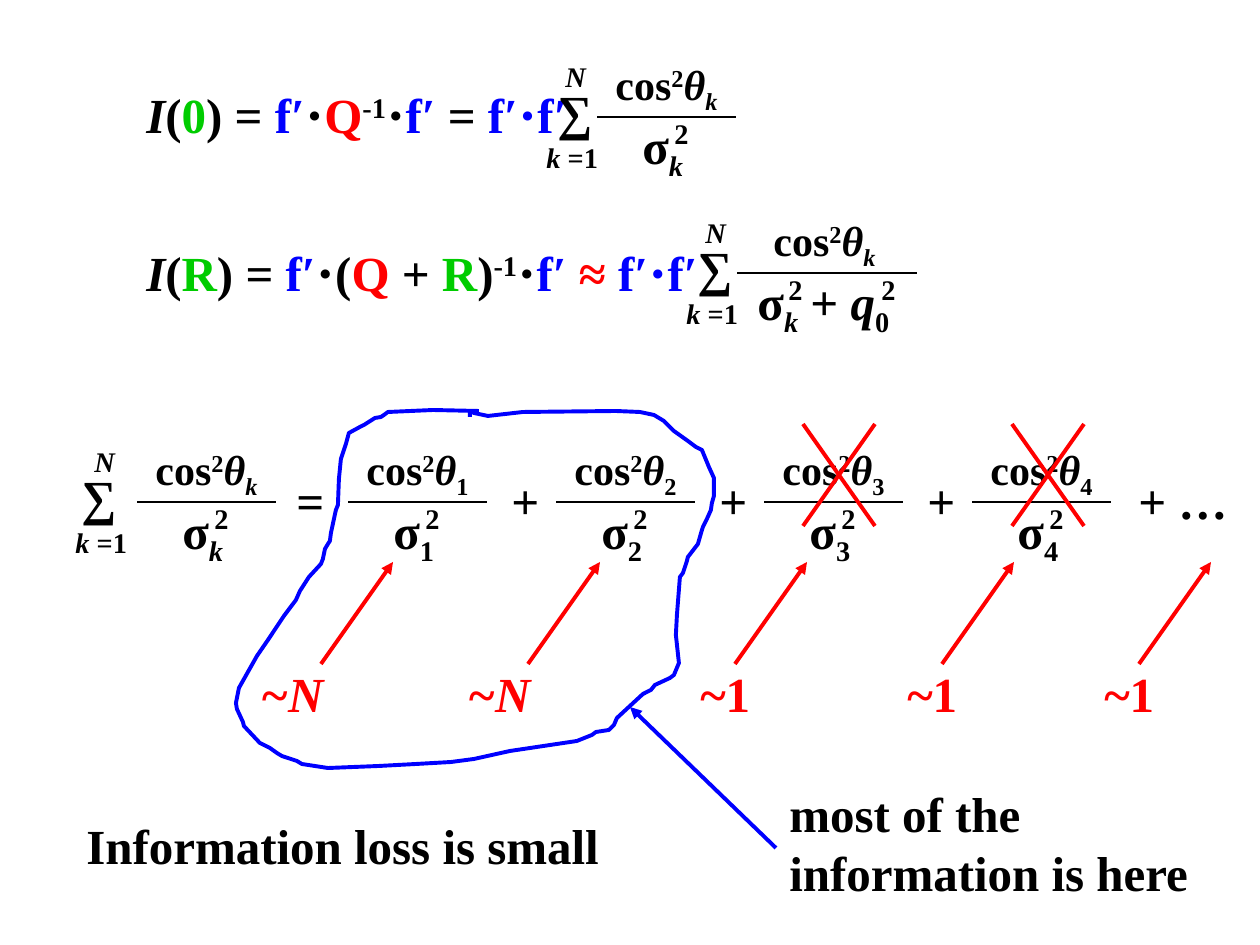
from lxml import etree
from pptx import Presentation
from pptx import util as u
from pptx.dml.color import RGBColor
from pptx.enum import shapes, text
from pptx.oxml.ns import qn

EMU_PER_PX = 914400 / 126
FONT = "Times New Roman"
BLACK = RGBColor(0, 0, 0)
RED = RGBColor(255, 0, 0)
GREEN = RGBColor(0, 204, 0)
BLUE = RGBColor(0, 0, 255)
SUP, SUB = 30000, -25000
LINE_HEIGHT = 72

LASSO = [
    (479, 411), (433, 410), (388, 412), (384, 415), (381, 417), (375, 418),
    (364, 425), (360, 427), (349, 433), (346, 444), (341, 459), (339, 479),
    (338, 505), (336, 510), (331, 533), (330, 541), (328, 544), (325, 549),
    (323, 559), (321, 564), (309, 577), (300, 591), (296, 600), (284, 616),
    (268, 640), (257, 656), (239, 688), (236, 703), (237, 709), (243, 722),
    (244, 726), (260, 743), (270, 748), (277, 753), (282, 756), (297, 761),
    (302, 764), (328, 768), (379, 766), (416, 764), (451, 762), (474, 759),
    (510, 751), (537, 747), (577, 741), (592, 735), (596, 732), (609, 730),
    (614, 725), (617, 718), (643, 694), (651, 690), (655, 685), (670, 678),
    (674, 675), (679, 663), (676, 635), (677, 615), (680, 577), (683, 573),
    (687, 561), (688, 557), (698, 544), (702, 530), (703, 527), (707, 519),
    (711, 510), (712, 503), (714, 496), (714, 478), (709, 467), (702, 450),
    (696, 447), (688, 441), (674, 431), (664, 421), (654, 415), (640, 412),
    (616, 411), (523, 412), (488, 416), (474, 413), (470, 411), (470, 417),
]


def px(length):
    return u.Emu(round(length * EMU_PER_PX))


def run(content, color=BLACK, italic=False, base=0):
    return content, color, italic, base


def write(slide, left, top, width, *paragraphs, size=28, height=LINE_HEIGHT, wrap=False):
    """Place a bold text box; each paragraph is a list of runs."""
    box = slide.shapes.add_textbox(px(left), px(top), px(width), px(height))
    frame = box.text_frame
    frame.word_wrap = wrap
    frame.auto_size = text.MSO_AUTO_SIZE.SHAPE_TO_FIT_TEXT
    for number, runs in enumerate(paragraphs):
        paragraph = frame.add_paragraph() if number else frame.paragraphs[0]
        for content, color, italic, base in runs:
            part = paragraph.add_run()
            part.text = content
            font = part.font
            font.name, font.size, font.bold, font.italic = FONT, u.Pt(size), True, italic
            font.color.rgb = color
            if base:
                part._r.get_or_add_rPr().set("baseline", str(base))


def draw_line(slide, start, end, color=RED, weight=2.25, arrow=False):
    line = slide.shapes.add_connector(
        shapes.MSO_CONNECTOR.STRAIGHT, *map(px, (*start, *end)))
    line.line.color.rgb = color
    line.line.width = u.Pt(weight)
    if arrow:
        etree.SubElement(line.line._get_or_add_ln(), qn("a:tailEnd"), type="triangle")
    etree.SubElement(line._element.spPr, qn("a:effectLst"))


def summation(slide, left, bar, sigma_dx=11):
    """Sum over k from 1 to N, centred on the height of a fraction bar."""
    write(slide, left + sigma_dx, bar - 42, 60, [run("∑")])
    write(slide, left, bar - 16, 86,
          [run("k ", italic=True, base=SUB), run("=1", base=SUB)])
    write(slide, left + 19, bar - 97, 49, [run("N", italic=True, base=SUB)])


def fraction(slide, left, bar, index, width=139, cos_dx=6, sigma_dx=33,
             square_dxs=(65,), addend=()):
    """cos²θ over σ², with an optional addend below the bar."""
    theta_index = run(index, italic=index == "k", base=SUB)
    write(slide, left + cos_dx, bar - 65, 133,
          [run("cos"), run("2", base=SUP), run("θ", italic=True), theta_index],
          size=24, height=63)
    draw_line(slide, (left + width, bar), (left, bar), BLACK, 1.5)
    for square_dx in square_dxs:
        write(slide, left + square_dx, bar - 13, 42, [run("2", base=SUP)])
    write(slide, left + sigma_dx, bar - 8, 168 if addend else 73,
          [run("σ"), theta_index, *addend])


def information_formulas(slide, left):
    prime = run("f′", BLUE)
    dot = run("⋅")
    product = run("f′⋅f′", BLUE)
    inverse = run("-1", base=SUP)
    write(slide, left, 78, 857,
          [run("I", italic=True), run("("), run("0", GREEN), run(") = "), prime, dot,
           run("Q", RED), inverse, dot, prime, run(" = "), product], wrap=True)
    summation(slide, left + 400, 117)
    fraction(slide, left + 463, 117, "k")

    write(slide, left, 236, 857,
          [run("I", italic=True), run("("), run("R", GREEN), run(") = "), prime, run("⋅("),
           run("Q ", RED), run("+ "), run("R", GREEN), run(")"), inverse, dot,
           run("f′ ", BLUE), run("≈ ", RED), product], wrap=True)
    summation(slide, left + 540, 273)
    fraction(slide, left + 603, 273, "k", width=180, cos_dx=24, sigma_dx=8,
             square_dxs=(39, 132),
             addend=(run(" + "), run("q", italic=True), run("0", base=SUB)))


def expansion(slide, left, bar):
    """The sum written out term by term."""
    operator_top = bar - 38
    summation(slide, left, bar, sigma_dx=6)
    fraction(slide, left + 74, bar, "k")
    write(slide, left + 221, operator_top, 54, [run("=")])
    for term in range(4):
        term_left = left + 285 + 208 * term
        fraction(slide, term_left, bar, str(term + 1))
        if term < 3:
            write(slide, term_left + 151, operator_top, 54, [run("+")])
    write(slide, left + 1063, operator_top, 116, [run("+ …")])


def term_sizes(slide, top):
    """Order of magnitude of each denominator, with an arrow to it."""
    for left, size in zip((321, 528, 735, 942, 1139), "NN111"):
        draw_line(slide, (left, top + 102), (left + 72, top), arrow=True)
        is_n = size == "N"
        write(slide, left - (73 if is_n else 47), top + 95, 89 if is_n else 76,
              [run("~" + size, RED, italic=is_n)])


def lasso(slide):
    builder = slide.shapes.build_freeform(*LASSO[0], scale=EMU_PER_PX)
    builder.add_line_segments(LASSO[1:], close=False)
    outline = builder.convert_to_shape()
    outline.shadow.inherit = False
    outline.fill.background()
    outline.line.color.rgb = BLUE
    outline.line.width = u.Pt(2.25)


def cross_out(slide, left, top, width=72, height=102):
    right, bottom = left + width, top + height
    draw_line(slide, (left, bottom), (right, top))
    draw_line(slide, (right, bottom), (left, top))


def conclusions(slide):
    draw_line(slide, (776, 848), (630, 707), BLUE, arrow=True)
    write(slide, 777, 777, 428, [run("most of the")], [run("information is here")],
          height=131)
    write(slide, 74, 809, 543, [run("Information loss is small")])


def main():
    deck = Presentation()
    deck.slide_width, deck.slide_height = px(1260), px(945)
    slide = deck.slides.add_slide(deck.slide_layouts[6])
    information_formulas(slide, 134)
    expansion(slide, 63, 502)
    term_sizes(slide, 562)
    lasso(slide)
    for left in (803, 1012):
        cross_out(slide, left, 424)
    conclusions(slide)
    deck.save("out.pptx")


if __name__ == "__main__":
    main()
